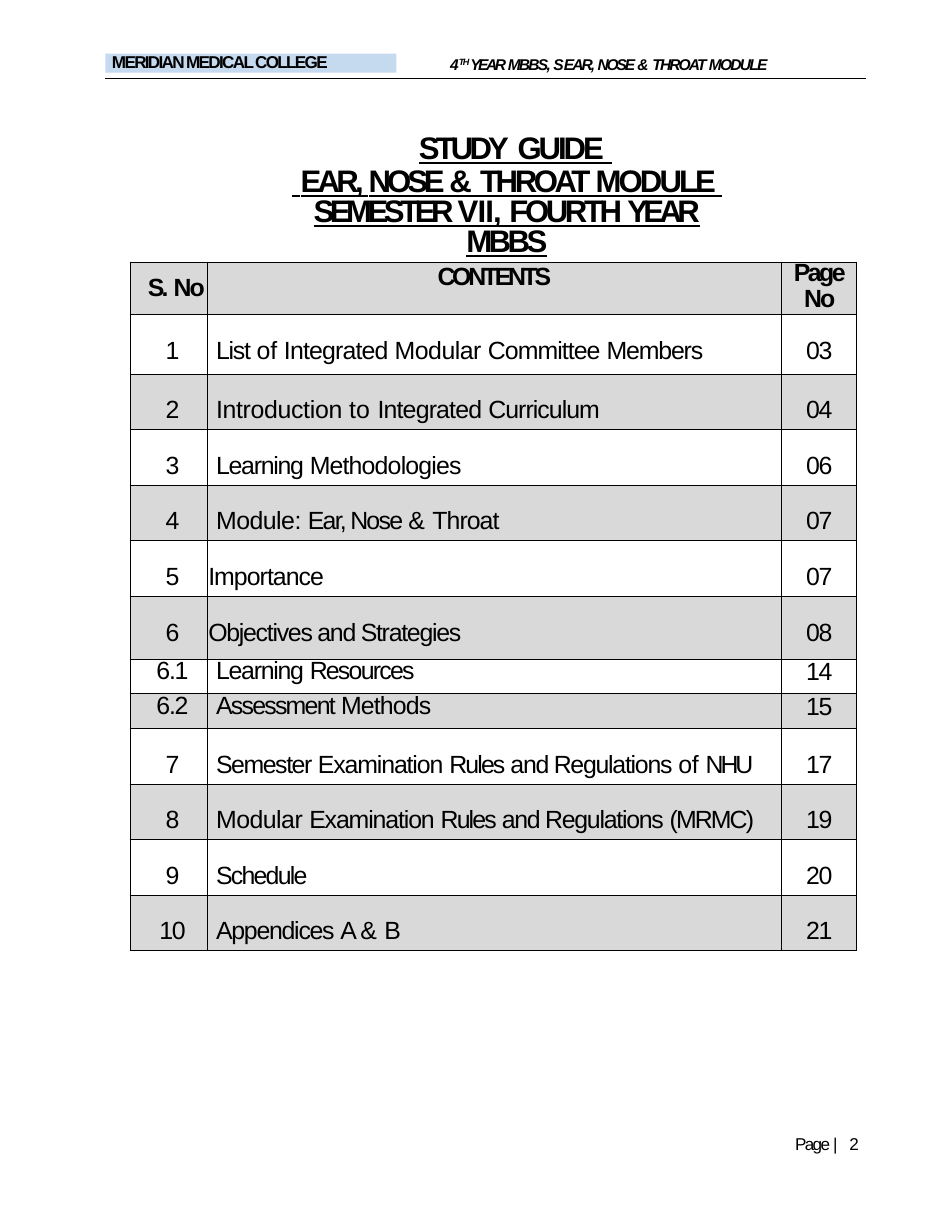
from dataclasses import dataclass

from lxml import etree
from pptx import Presentation
from pptx.dml.color import RGBColor
from pptx.enum.shapes import MSO_CONNECTOR, MSO_SHAPE
from pptx.enum.text import MSO_ANCHOR, PP_ALIGN
from pptx.oxml.ns import qn
from pptx.util import Inches, Pt

STRAIGHT = MSO_CONNECTOR.STRAIGHT
RECTANGLE = MSO_SHAPE.RECTANGLE
TOP = MSO_ANCHOR.TOP
LEFT, CENTER = PP_ALIGN.LEFT, PP_ALIGN.CENTER


@dataclass(frozen=True)
class Theme:
    font: str = "Arial"
    ink: str = "000000"
    band: str = "D9D9D9"
    banner: str = "C5D9EF"
    header: float = 10
    small: float = 11
    contents: float = 16
    title: float = 20


theme = Theme()


def set_frame(frame, top=0):
    frame.word_wrap = True
    frame.vertical_anchor = TOP
    frame.margin_left = frame.margin_right = frame.margin_bottom = 0
    frame.margin_top = Inches(top)


def write(paragraph, runs, size, bold=False, italic=False, underline=False,
          align=LEFT, indent=0, line=None):
    paragraph.alignment = align
    if line:
        paragraph.line_spacing = Pt(line)
    paragraph._p.get_or_add_pPr().set("marL", str(Inches(indent)))
    written = []
    for text, spacing in runs:
        run = paragraph.add_run()
        run.text = text
        run.font.name = theme.font
        run.font.size = Pt(size)
        run.font.bold = bold
        run.font.italic = italic
        run.font.underline = underline
        run.font.color.rgb = RGBColor.from_string(theme.ink)
        run._r.get_or_add_rPr().set("spc", str(round(spacing * 100)))
        written.append(run)
    return written


prs = Presentation()
prs.slide_width, prs.slide_height = Inches(8.5), Inches(11)
slide = prs.slides.add_slide(prs.slide_layouts[6])
shapes = slide.shapes

header_rule = shapes.add_connector(STRAIGHT, Inches(0.94), Inches(0.7), Inches(7.73), Inches(0.7))
header_rule.line.color.rgb = RGBColor.from_string(theme.ink)
header_rule.line.width = Pt(0.75)
etree.SubElement(header_rule._element.spPr, qn("a:effectLst"))

module_header = shapes.add_textbox(Inches(4.01), Inches(0.48), Inches(3.63), Inches(0.18)).text_frame
set_frame(module_header, 0.01)
header_runs = write(
    module_header.paragraphs[0],
    [("4", -0.6), ("TH ", -0.9), ("YEAR ", -1.6), ("MBBS, ", -1.1), ("S", -1.6), ("EAR, ", -1.2),
     ("NOSE ", -1.4), ("& ", -0.2), ("THROAT ", -1.2), ("MODULE", -1.1)],
    theme.header, bold=True, italic=True, indent=0.01)
header_runs[1]._r.get_or_add_rPr().set("baseline", "30000")

page_footer = shapes.add_textbox(Inches(7.09), Inches(10.14), Inches(0.64), Inches(0.18)).text_frame
set_frame(page_footer)
write(page_footer.paragraphs[0], [("Page ", -1.1), ("| ", 2.2), ("2", -0.6)],
      theme.small, indent=0.01, line=11.5)

college_banner = shapes.add_shape(RECTANGLE, Inches(0.94), Inches(0.48), Inches(2.6), Inches(0.17))
college_banner.shadow.inherit = False
college_banner.fill.solid()
college_banner.fill.fore_color.rgb = RGBColor.from_string(theme.banner)
college_banner.line.fill.background()
set_frame(college_banner.text_frame)
write(college_banner.text_frame.paragraphs[0], [("MERIDIAN MEDICAL COLLEGE", -1.1)],
      theme.small, bold=True, indent=0.06, line=11.8)

title = shapes.add_textbox(Inches(2.43), Inches(1.17), Inches(4.18), Inches(0.9)).text_frame
set_frame(title, 0.01)
write(title.paragraphs[0], [("STUDY", -2.5), (" ", -1.1), ("GUIDE", -2), (" ", -0.9)],
      theme.title, bold=True, underline=True, indent=1.31, line=21.6)
module_title = title.add_paragraph()
module_title.space_before = Pt(2.3)
module_runs = write(
    module_title,
    [(" ", -0.9), ("EAR, ", -2.4), ("NOSE ", -2.6), ("& ", -0.3), ("THROAT ", -2.2),
     ("MODULE ", -1.9), (" ", -1.9), ("SEMESTER ", -2.9), ("VII, ", -0.6), ("FOURTH ", -2.2),
     ("YEAR", -3), (" ", -4), ("MBBS", -2.3)],
    theme.title, bold=True, underline=True, align=CENTER, indent=0.01, line=19.2)
module_runs[6].font.underline = False

entries = [
    ("1", [("List ", -0.8), ("of ", -0.1), ("Integrated ", -0.5), ("Modular ", -0.3),
           ("Committee ", -0.6), ("Members", -0.7)], "03"),
    ("2", [("Introduction ", -0.2), ("to ", 0.2), ("Integrated ", -0.5), ("Curriculum", -0.6)], "04"),
    ("3", [("Learning ", -0.8), ("Methodologies", -0.5)], "06"),
    ("4", [("Module: ", -0.3), ("Ear, Nose ", -1.1), ("& ", 0.2), ("Throat", -0.6)], "07"),
    ("5", [("Importance", -0.6)], "07"),
    ("6", [("Objectives and Strategies", -0.8)], "08"),
    ("6.1", [("Learning ", -0.8), ("Resources", -1.1)], "14"),
    ("6.2", [("Assessment ", -1.1), ("Methods", -0.5)], "15"),
    ("7", [("Semester ", -0.9), ("Examination ", -0.7), ("Rules ", -1.2),
           ("and Regulations ", -0.8), ("of ", -0.1), ("NHU", -1.9)], "17"),
    ("8", [("Modular ", -0.3), ("Examination ", -0.7), ("Rules ", -1.2),
           ("and Regulations ", -0.8), ("(MRMC)", -1.2)], "19"),
    ("9", [("Schedule", -1.1)], "20"),
    ("10", [("Appendices ", -0.8), ("A ", -1.4), ("& ", 0.2), ("B", -2)], "21"),
]
table_height = 6.15
special_heights = {0: 0.47, 1: 0.53, 6: 0.56, 7: 0.31, 8: 0.31}
row_count = len(entries) + 1
regular_height = (table_height - sum(special_heights.values())) / (row_count - len(special_heights))

contents = shapes.add_table(row_count, 3, Inches(1.16), Inches(2.34), Inches(6.49), Inches(table_height)).table
contents.first_row = contents.horz_banding = False
for column, width in zip(contents.columns, (0.69, 5.13, 0.67)):
    column.width = Inches(width)

for row_index, row in enumerate(contents.rows):
    row.height = Inches(special_heights.get(row_index, regular_height))
    for cell in row.cells:
        set_frame(cell.text_frame)
        cell.margin_left = cell.margin_right = cell.margin_top = cell.margin_bottom = 0
        cell.vertical_anchor = TOP
        for side in ("a:lnL", "a:lnR", "a:lnT", "a:lnB"):
            border = etree.SubElement(cell._tc.get_or_add_tcPr(), qn(side), w=str(Pt(0.5)))
            border_fill = etree.SubElement(border, qn("a:solidFill"))
            etree.SubElement(border_fill, qn("a:srgbClr"), val=theme.ink)
        if row_index % 2 == 0:
            cell.fill.solid()
            cell.fill.fore_color.rgb = RGBColor.from_string(theme.band)
        else:
            cell.fill.background()

number_head, contents_head, page_head = contents.rows[0].cells
number_head.margin_top = Inches(0.11)
write(number_head.text_frame.paragraphs[0], [("S.", -1.7), (" No", -1.2)],
      theme.contents, bold=True, indent=0.16)
write(contents_head.text_frame.paragraphs[0], [("CONTENTS", -2.1)],
      theme.contents, bold=True, align=CENTER, line=18.7)
write(page_head.text_frame.paragraphs[0], [("Page", -1.6)],
      theme.contents, bold=True, align=CENTER, indent=0.01, line=15.6)
write(page_head.text_frame.add_paragraph(), [("No", -1.1)],
      theme.contents, bold=True, align=CENTER, indent=0.01, line=17.1)

for row_index, (number, heading, page) in enumerate(entries, start=1):
    subsection = "." in number
    heading_indent = 0.01 if number in ("5", "6") else 0.08
    number_spacing = 0 if len(number) == 1 else -0.8
    columns = (
        ([(number, number_spacing)], CENTER, 0.07, 16.6),
        (heading, LEFT, heading_indent, 16.6),
        ([(page, -0.8)], CENTER, 0, 17.1),
    )
    for cell, (runs, align, indent, line) in zip(contents.rows[row_index].cells, columns):
        cell.margin_top = Inches(0 if subsection else 0.2)
        write(cell.text_frame.paragraphs[0], runs, theme.contents, align=align,
              indent=indent, line=line if subsection else None)

prs.save("out.pptx")
